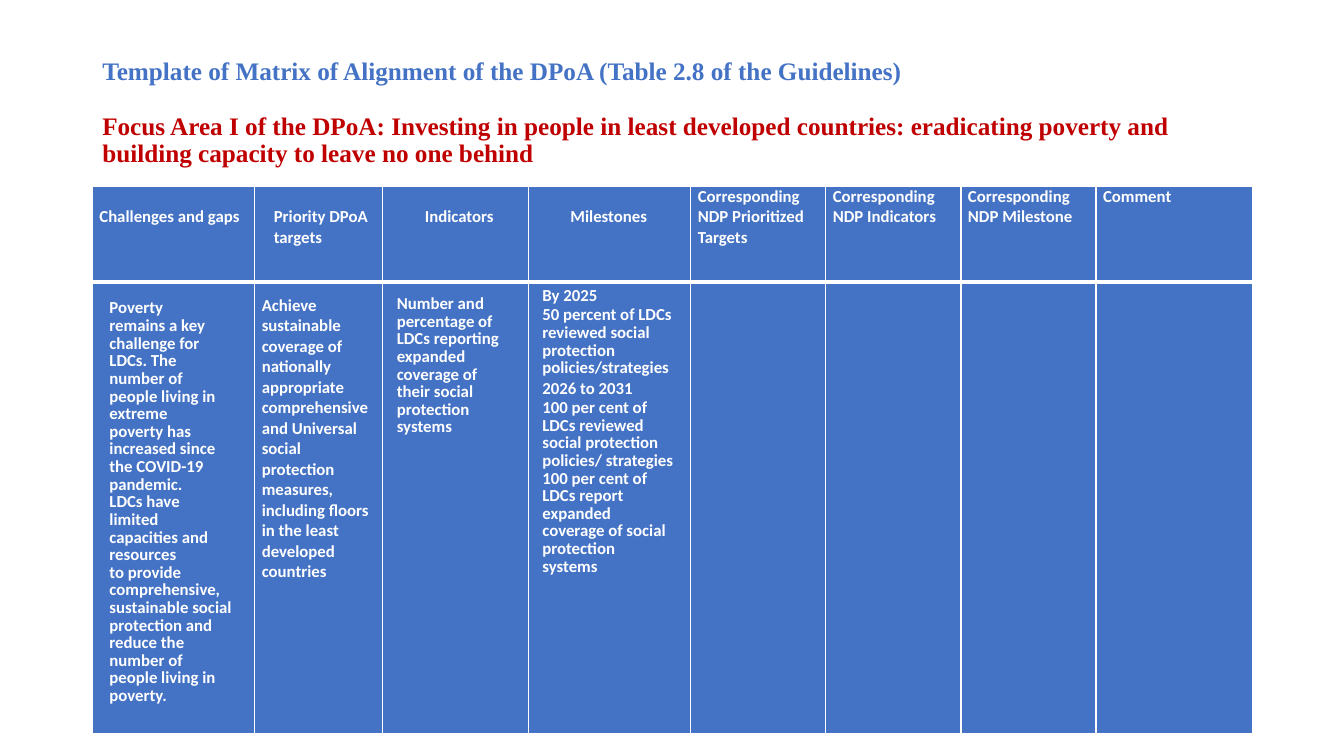
from lxml import etree
from pptx import Presentation
from pptx.dml.color import RGBColor
from pptx.enum import text
from pptx.oxml import ns
from pptx.util import Pt

BLUE, RED, WHITE = "4472C4", "C00000", "FFFFFF"
COL_WIDTHS = [116, 91.5, 104, 116, 96.5, 96.5, 96.5, 112]
ROW_HEIGHTS = [68.4, 322.6]
TIGHT = 0.86

# Each cell: top margin, then paragraphs as (text, format)
HEADERS = [
    (14.65, [("Challenges and gaps", {})]),
    (14.65, [("Priority DPoA targets", {"left": 8.6})]),
    (14.65, [("Indicators", {"left": 25})]),
    (14.65, [("Milestones", {"left": 25})]),
    (0, [("Corresponding NDP Prioritized Targets", {})]),
    (0, [("Corresponding NDP Indicators", {})]),
    (0, [("Corresponding NDP Milestone", {})]),
    (0, [("Comment", {})]),
]
DETAILS = [
    (12.6, [
        ("Poverty remains a key challenge for LDCs. The number of people living in extreme "
         "poverty has increased since the COVID-19 pandemic. LDCs have limited capacities "
         "and resources", {"left": 7.2, "right": 22.6, "line": TIGHT}),
        ("to provide comprehensive, sustainable social protection and reduce the number of "
         "people living in poverty.", {"left": 7.2, "right": 10.4, "line": TIGHT}),
    ]),
    (9.45, [
        ("Achieve sustainable coverage of nationally appropriate comprehensive and Universal "
         "social protection measures, including floors in the least developed countries", {}),
    ]),
    (9.45, [
        ("Number and percentage of LDCs reporting expanded coverage of their social "
         "protection systems", {"left": 5, "right": 7, "line": TIGHT}),
    ]),
    (8.6, [
        ("By 2025", {"left": 5, "line": Pt(8.6)}),
        ("50 percent of LDCs reviewed social protection policies/strategies",
         {"left": 5, "line": TIGHT, "before": 0.3}),
        ("2026 to 2031", {"left": 5, "line": Pt(8.6), "before": 7}),
        ("100 per cent of LDCs reviewed social protection policies/ strategies",
         {"left": 5, "line": TIGHT, "before": 0.3}),
        ("100 per cent of LDCs report expanded coverage of social protection systems",
         {"left": 5, "right": 10.7, "line": TIGHT}),
    ]),
] + [(0, [])] * 4


def color(value):
    return RGBColor.from_string(value)


def style_paragraph(p, content, font, size, fill, left=0, right=0, line=1.0, before=0):
    p.text = content
    p.font.name, p.font.size, p.font.bold = font, Pt(size), True
    p.font.color.rgb = color(fill)
    p.line_spacing = line
    p.space_before = Pt(before)
    pPr = p._p.get_or_add_pPr()
    for side, indent in (("marL", left), ("marR", right)):
        pPr.set(side, str(int(Pt(indent))))


def set_borders(cell, top, bottom):
    """Draw white borders; they must come before the fill in the cell properties."""
    tcPr = cell._tc.get_or_add_tcPr()
    widths = {"lnL": 1, "lnR": 1, "lnT": top, "lnB": bottom}
    for i, (tag, width) in enumerate(widths.items()):
        ln = etree.Element(ns.qn("a:" + tag), w=str(int(Pt(width))))
        fill = etree.SubElement(ln, ns.qn("a:solidFill"))
        etree.SubElement(fill, ns.qn("a:srgbClr"), val=WHITE)
        tcPr.insert(i, ln)


def add_title(slide, x, y, w, h):
    tf = slide.shapes.add_textbox(Pt(x), Pt(y), Pt(w), Pt(h)).text_frame
    tf.word_wrap = True
    tf.vertical_anchor = text.MSO_ANCHOR.MIDDLE
    style_paragraph(tf.paragraphs[0],
                    "Template of Matrix of Alignment of the DPoA (Table 2.8 of the Guidelines)",
                    "Times New Roman", 18, BLUE, line=0.9)
    style_paragraph(tf.add_paragraph(),
                    "Focus Area I of the DPoA: Investing in people in least developed countries: "
                    "eradicating poverty and building capacity to leave no one behind",
                    "Times New Roman", 18, RED, line=0.9, before=20)


def fill_cell(cell, top_margin, paragraphs):
    cell.fill.solid()
    cell.fill.fore_color.rgb = color(BLUE)
    cell.margin_left = cell.margin_right = Pt(5)
    cell.margin_top, cell.margin_bottom = Pt(top_margin), 0
    tf = cell.text_frame
    for i, (content, layout) in enumerate(paragraphs):
        p = tf.add_paragraph() if i else tf.paragraphs[0]
        style_paragraph(p, content, "Calibri", 12, WHITE, **layout)


def add_matrix(slide, x, y):
    table = slide.shapes.add_table(2, len(COL_WIDTHS), Pt(x), Pt(y), Pt(sum(COL_WIDTHS)),
                                   Pt(sum(ROW_HEIGHTS))).table
    table.horz_banding = False
    for column, width in zip(table.columns, COL_WIDTHS):
        column.width = Pt(width)
    borders = [(1, 3), (3, 1)]
    for r, cells in enumerate((HEADERS, DETAILS)):
        table.rows[r].height = Pt(ROW_HEIGHTS[r])
        for c, (top_margin, paragraphs) in enumerate(cells):
            cell = table.cell(r, c)
            fill_cell(cell, top_margin, paragraphs)
            set_borders(cell, *borders[r])


def main():
    prs = Presentation()
    prs.slide_width, prs.slide_height = Pt(960), Pt(540)
    slide = prs.slides.add_slide(prs.slide_layouts[6])
    add_title(slide, 66, 28.75, 828, 104.4)
    add_matrix(slide, 66, 133.2)
    prs.save("out.pptx")


if __name__ == "__main__":
    main()
